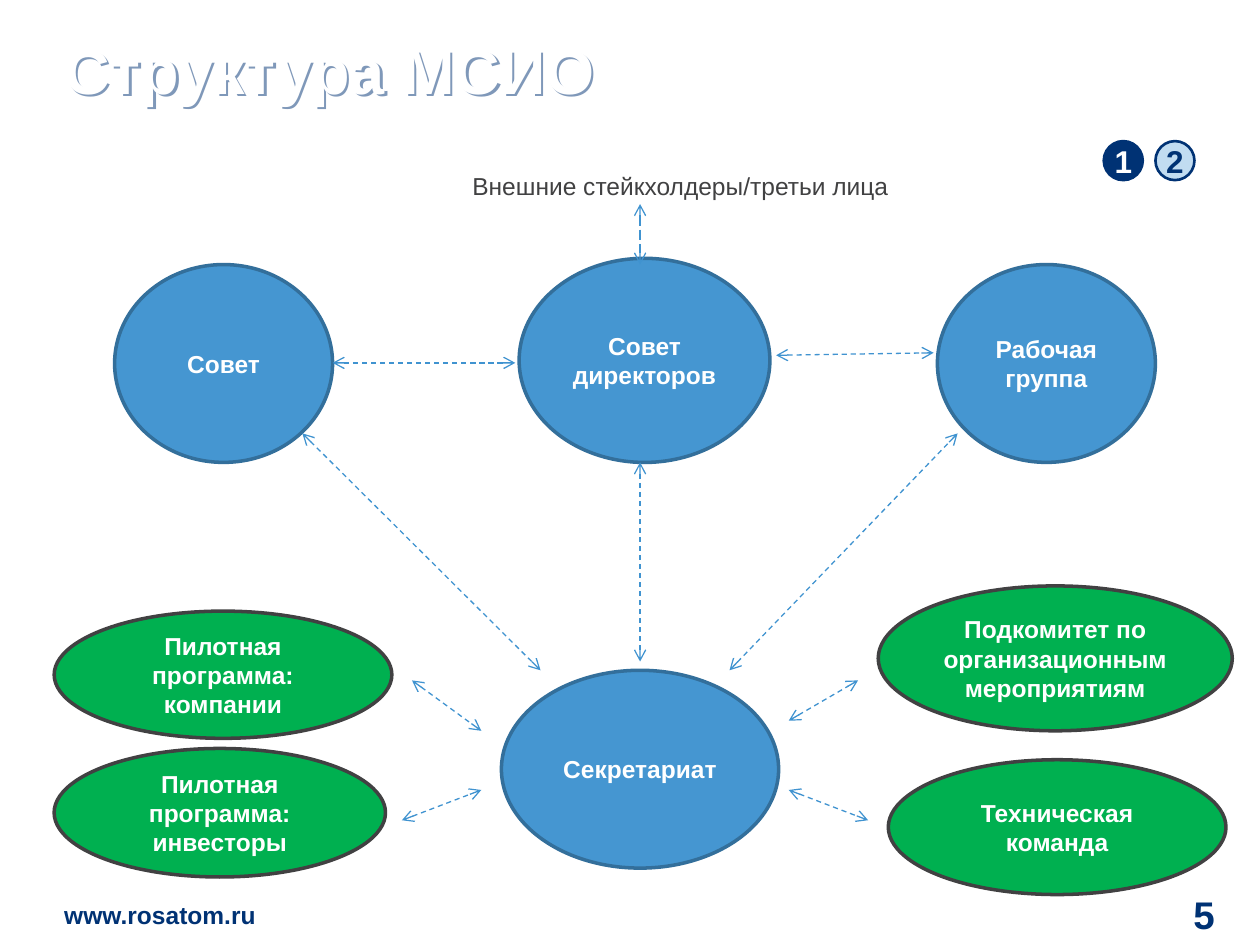
from lxml import etree
from pptx import Presentation
from pptx.dml.color import RGBColor
from pptx.enum.dml import MSO_LINE_DASH_STYLE as Dash
from pptx.enum.shapes import MSO_CONNECTOR as Connector, MSO_SHAPE as Shape
from pptx.enum.text import MSO_ANCHOR as Anchor, MSO_AUTO_SIZE as AutoSize, PP_ALIGN as Align
from pptx.oxml import parse_xml
from pptx.oxml.ns import nsdecls, qn
from pptx.util import Inches, Pt

COLORS = {
    "navy": "003274", "pale": "C1DCF1", "white": "FFFFFF", "gray": "414142",
    "green": "00B050", "blue": "4596D1", "outline": "336F9B", "arrow": "4093D0",
}

deck = Presentation()
deck.slide_width, deck.slide_height = Inches(10), Inches(7.5)
page = deck.slides.add_slide(deck.slide_layouts[6])


def write(box, text, size, color, bold=True, align=Align.LEFT, margin=True, wrap=True):
    frame = box.text_frame
    frame.text = text
    frame.word_wrap = wrap
    if not margin:
        frame.margin_left = frame.margin_right = frame.margin_top = frame.margin_bottom = 0
    para = frame.paragraphs[0]
    para.alignment = align
    font = para.runs[0].font
    font.name, font.size, font.bold = "Arial", Pt(size), bold
    font.color.rgb = RGBColor.from_string(COLORS[color])
    return frame


def add_ellipse(place, text, size, color, fill, line, width, margin=True):
    oval = page.shapes.add_shape(Shape.OVAL, *[Inches(v) for v in place])
    oval.shadow.inherit = False
    oval.fill.solid()
    oval.fill.fore_color.rgb = RGBColor.from_string(COLORS[fill])
    oval.line.color.rgb = RGBColor.from_string(COLORS[line])
    oval.line.width = Pt(width)
    frame = write(oval, text, size, color, align=Align.CENTER, margin=margin, wrap=margin)
    frame.vertical_anchor = Anchor.MIDDLE


site = page.shapes.add_textbox(Inches(0.51), Inches(7.14), Inches(1.55), Inches(0.23))
frame = write(site, "www.rosatom.ru", 14, "navy", margin=False, wrap=False)
frame.auto_size = AutoSize.SHAPE_TO_FIT_TEXT

for left, label, color, fill in [(8.76, "1", "white", "navy"), (9.17, "2", "navy", "pale")]:
    add_ellipse((left, 1.12, 0.31, 0.31), label, 18, color, fill, "navy", 1.5, margin=False)

title = page.shapes.add_textbox(Inches(0.51), Inches(0.09), Inches(8.98), Inches(0.99))
frame = write(title, "Структура МСИО", 36, "white", margin=False)
frame.vertical_anchor = Anchor.MIDDLE
frame.paragraphs[0].line_spacing = 0.9
title.fill.background()
title.line.fill.background()
title.element.spPr.append(parse_xml(
    f'<a:effectLst {nsdecls("a")}><a:outerShdw dist="25400" dir="2700000" algn="tl">'
    f'<a:srgbClr val="{COLORS["navy"]}"><a:alpha val="50000"/></a:srgbClr>'
    '</a:outerShdw></a:effectLst>'))

number = page.shapes.add_textbox(Inches(9.11), Inches(7.05), Inches(0.89), Inches(0.41))
frame = write(number, "5", 22, "navy", align=Align.RIGHT, margin=False)
frame.margin_right = Inches(0.36)
frame.vertical_anchor = Anchor.MIDDLE

groups = [
    ("green", "gray", [
        ((0.43, 5.94, 2.63, 1.02), "Пилотная программа: инвесторы"),
        ((7.05, 6.03, 2.68, 1.07), "Техническая команда"),
        ((0.43, 4.85, 2.68, 1.01), "Пилотная программа: компании"),
        ((6.97, 4.65, 2.81, 1.15), "Подкомитет по организационным мероприятиям"),
    ]),
    ("blue", "outline", [
        ((0.91, 2.1, 1.73, 1.57), "Совет"),
        ((4.12, 2.05, 1.99, 1.62), "Совет директоров"),
        ((7.44, 2.1, 1.73, 1.57), "Рабочая группа"),
        ((3.98, 5.32, 2.2, 1.57), "Секретариат"),
    ]),
]
for fill, line, bodies in groups:
    for place, name in bodies:
        add_ellipse(place, name, 14, "white", fill, line, 2)

caption = page.shapes.add_textbox(Inches(3.65), Inches(1.31), Inches(4.65), Inches(0.34))
write(caption, "Внешние стейкхолдеры/третьи лица", 14, "gray", bold=False)

links = [
    (2.64, 2.88, 4.09, 2.88, Dash.DASH),
    (6.16, 2.82, 7.41, 2.8, Dash.DASH),
    (5.08, 3.67, 5.08, 5.25, Dash.DASH),
    (2.4, 3.44, 4.29, 5.32, Dash.DASH),
    (5.79, 5.32, 7.6, 3.44, Dash.DASH),
    (3.27, 5.4, 3.82, 5.8, Dash.DASH),
    (3.19, 6.51, 3.82, 6.27, Dash.DASH),
    (6.26, 5.72, 6.81, 5.4, Dash.DASH),
    (6.26, 6.27, 6.89, 6.51, Dash.DASH),
    (5.08, 1.62, 5.08, 2.1, Dash.LONG_DASH),
]
for *ends, dash in links:
    link = page.shapes.add_connector(Connector.STRAIGHT, *[Inches(v) for v in ends])
    link.line.color.rgb = RGBColor.from_string(COLORS["arrow"])
    link.line.width = Pt(0.75)
    link.line.dash_style = dash
    properties = link.element.spPr
    for tag in ("a:headEnd", "a:tailEnd"):
        etree.SubElement(properties.find(qn("a:ln")), qn(tag), type="arrow")
    etree.SubElement(properties, qn("a:effectLst"))

deck.save("out.pptx")
